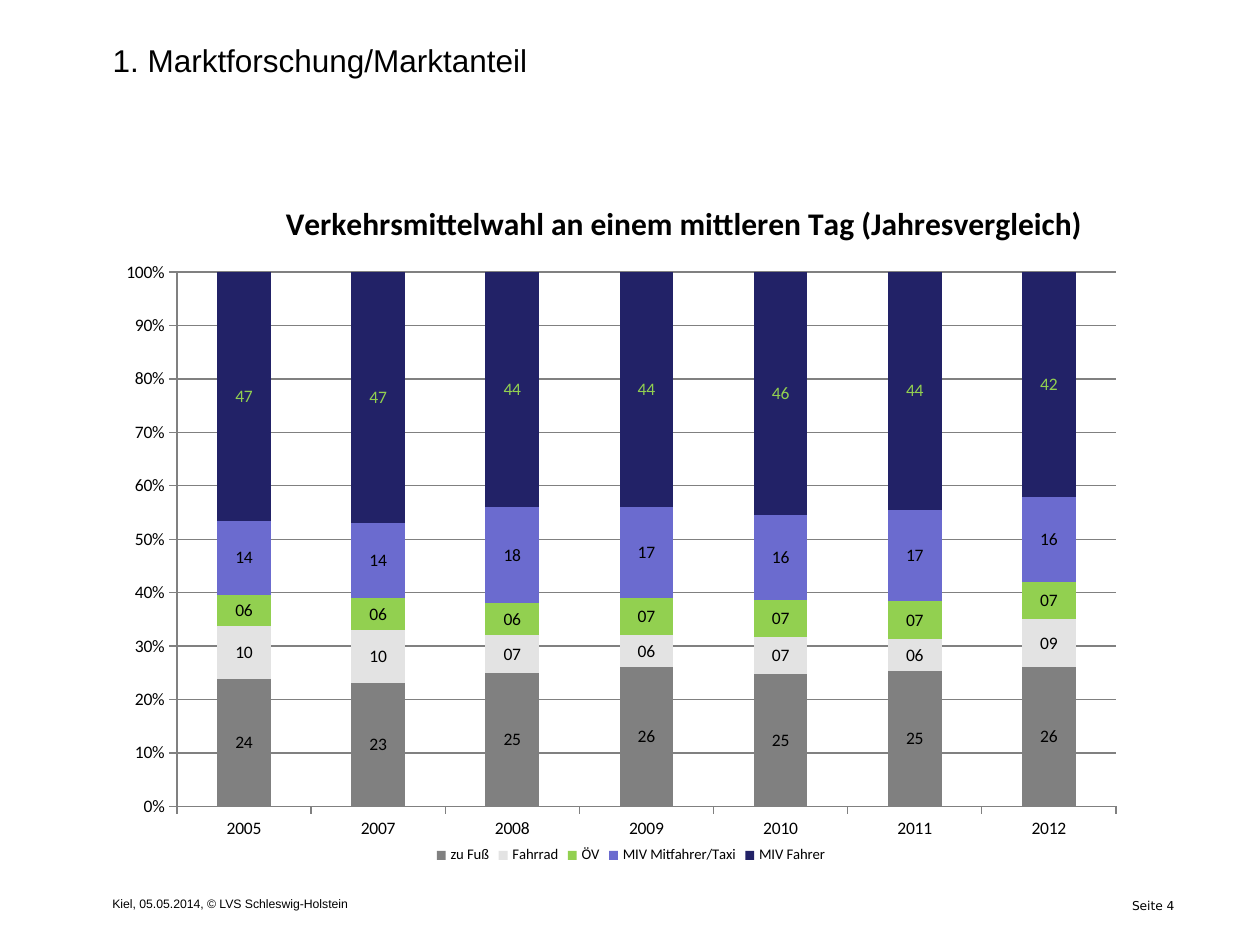
import pptx
import pptx.chart.data
import pptx.dml.color
import pptx.enum.chart
import pptx.enum.text
import pptx.oxml
import pptx.oxml.ns
import pptx.util

PX = 914400 / 126
YEARS = ["2005", "2007", "2008", "2009", "2010", "2011", "2012"]
# name, shares in percent, fill colour, label colour
MODES = [
    ("zu Fuß", (24, 23, 25, 26, 25, 25, 26), "808080", "000000"),
    ("Fahrrad", (10, 10, 7, 6, 7, 6, 9), "E3E3E3", "000000"),
    ("ÖV", (6, 6, 6, 7, 7, 7, 7), "92D050", "000000"),
    ("MIV Mitfahrer/Taxi", (14, 14, 18, 17, 16, 17, 16), "6B6BCF", "000000"),
    ("MIV Fahrer", (47, 47, 44, 44, 46, 44, 42), "222267", "92D050"),
]


def px(n):
    return pptx.util.Emu(round(n * PX))


def rgb(value):
    return pptx.dml.color.RGBColor.from_string(value)


def set_font(font, size, name="Calibri", color="000000", bold=False):
    font.size = pptx.util.Pt(size)
    font.name = name
    font.bold = bold
    font.color.rgb = rgb(color)


def write(tf, text, size, name="Arial", align="LEFT"):
    tf.word_wrap = True
    tf.auto_size = pptx.enum.text.MSO_AUTO_SIZE.NONE
    tf.vertical_anchor = pptx.enum.text.MSO_ANCHOR.TOP
    p = tf.paragraphs[0]
    p.alignment = pptx.enum.text.PP_ALIGN[align]
    r = p.add_run()
    r.text = text
    set_font(r.font, size, name)


def add_title(s, text, x, y, w, h):
    sp = s.shapes.title
    sp.left, sp.top, sp.width, sp.height = map(px, (x, y, w, h))
    write(sp.text_frame, text, 18)


def add_text(s, text, x, y, w, h, **fmt):
    sp = s.shapes.add_textbox(*map(px, (x, y, w, h)))
    write(sp.text_frame, text, **fmt)


def set_layout(parent, after, inner=False, **fractions):
    """Place a chart part by fractions of the chart's size."""
    for old in parent.findall(pptx.oxml.ns.qn("c:layout")):
        parent.remove(old)
    target = '<c:layoutTarget val="inner"/>' if inner else ""
    modes = "".join(f'<c:{k}Mode val="edge"/>' for k in "xy")
    sizes = "".join(f'<c:{k} val="{v}"/>' for k, v in fractions.items())
    layout = pptx.oxml.parse_xml(
        f'<c:layout {pptx.oxml.ns.nsdecls("c")}><c:manualLayout>'
        f"{target}{modes}{sizes}</c:manualLayout></c:layout>")
    if after is None:
        parent.insert(0, layout)
    else:
        after.addnext(layout)


def format_axis(axis):
    set_font(axis.tick_labels.font, 10)
    axis.major_tick_mark = pptx.enum.chart.XL_TICK_MARK.OUTSIDE
    axis.format.line.color.rgb = rgb("808080")


def add_share_chart(s, title, x, y, w, h):
    data = pptx.chart.data.CategoryChartData()
    data.categories = YEARS
    for name, values, *_ in MODES:
        data.add_series(name, values)
    kind = pptx.enum.chart.XL_CHART_TYPE.COLUMN_STACKED_100
    chart = s.shapes.add_chart(kind, *map(px, (x, y, w, h)), data).chart
    set_font(chart.font, 10)

    tf = chart.chart_title.text_frame
    tf.text = title
    set_font(tf.paragraphs[0].runs[0].font, 18, bold=True)
    title_xml = chart.chart_title._element
    set_layout(title_xml, title_xml.find(pptx.oxml.ns.qn("c:tx")), x=0.16, y=0.03)

    plot = chart.plots[0]
    plot.gap_width, plot.overlap = 150, 100
    plot.vary_by_categories = False
    set_layout(plot._element.getparent(), None, inner=True,
               x=0.06, y=0.14, w=0.91, h=0.77)
    for series, (_, _, fill, label) in zip(plot.series, MODES):
        series.format.fill.solid()
        series.format.fill.fore_color.rgb = rgb(fill)
        labels = series.data_labels
        labels.show_value = True
        labels.number_format = "##,#00"
        labels.number_format_is_linked = False
        set_font(labels.font, 10, color=label)

    format_axis(chart.category_axis)
    axis = chart.value_axis
    format_axis(axis)
    axis.minimum_scale, axis.maximum_scale, axis.major_unit = 0, 1, 0.1
    axis.tick_labels.number_format = "0%"
    axis.tick_labels.number_format_is_linked = False
    axis.major_gridlines.format.line.color.rgb = rgb("808080")

    chart.has_legend = True
    chart.legend.position = pptx.enum.chart.XL_LEGEND_POSITION.BOTTOM
    chart.legend.include_in_layout = True
    set_font(chart.legend.font, 8.4)


def main():
    prs = pptx.Presentation()
    prs.slide_width, prs.slide_height = px(1260), px(945)
    s = prs.slides.add_slide(prs.slide_layouts[5])
    add_text(s, "Seite 4", 116, 892, 1071, 21, size=7, name="DejaVu Sans", align="RIGHT")
    add_title(s, "1. Marktforschung/Marktanteil", 100, 35, 678, 42)
    add_text(s, "Kiel, 05.05.2014, © LVS Schleswig-Holstein", 100, 890, 481, 24, size=7)
    add_share_chart(s, "Verkehrsmittelwahl an einem mittleren Tag (Jahresvergleich)",
                    115, 175, 1032, 694)
    prs.save("out.pptx")


if __name__ == "__main__":
    main()
